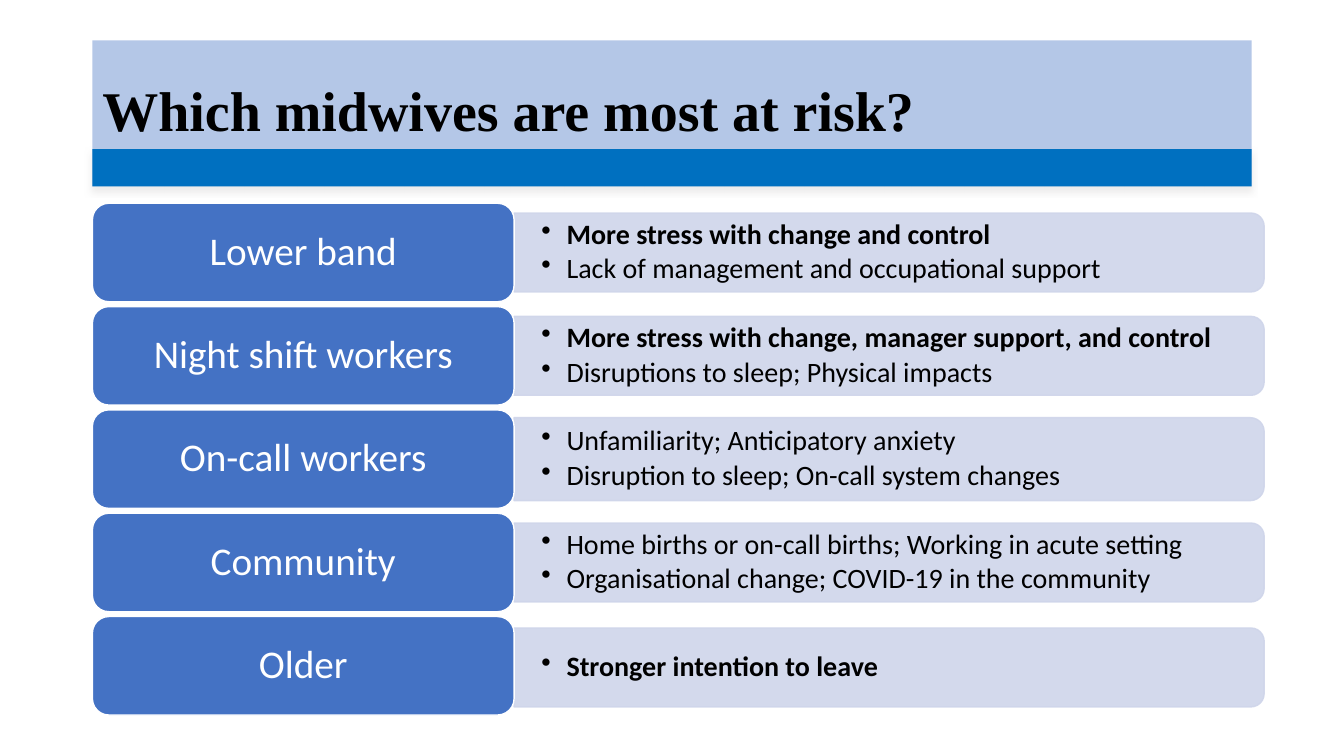
import dataclasses

import pptx
import pptx.dml.color
import pptx.enum.shapes
import pptx.enum.text
import pptx.oxml
import pptx.oxml.ns
import pptx.presentation
import pptx.shapes.autoshape
import pptx.slide
import pptx.text.text
import pptx.util

RGBColor = pptx.dml.color.RGBColor
Shape = pptx.shapes.autoshape.Shape
MSO_SHAPE = pptx.enum.shapes.MSO_SHAPE
PP_ALIGN = pptx.enum.text.PP_ALIGN

BLACK = RGBColor(0x00, 0x00, 0x00)
WHITE = RGBColor(0xFF, 0xFF, 0xFF)
TITLE_FILL = RGBColor(0xB4, 0xC7, 0xE7)
BAR_FILL = RGBColor(0x00, 0x70, 0xC0)
LABEL_FILL = RGBColor(0x44, 0x72, 0xC4)
PANEL_FILL = RGBColor(0xCF, 0xD5, 0xEA)

SLIDE_W = pptx.util.Inches(13.33)
SLIDE_H = pptx.util.Inches(7.5)
COL = SLIDE_W / 160
ROW = SLIDE_H / 90

LEFT = 11
LABEL_W = 50.2
PANEL_LEFT = LEFT + LABEL_W
PANEL_W = 89.28
FIRST_TOP = 24.2
LABEL_H = 11.72
PITCH = 12.3


@dataclasses.dataclass(frozen=True)
class Box:
    left: float
    top: float
    width: float
    height: float

    def emu(self) -> tuple[int, int, int, int]:
        return (round(self.left * COL), round(self.top * ROW),
                round(self.width * COL), round(self.height * ROW))


@dataclasses.dataclass(frozen=True)
class Bullet:
    text: str
    bold: bool = False


@dataclasses.dataclass(frozen=True)
class RiskGroup:
    label: str
    bullets: tuple[Bullet, ...]
    panel_height: float = 9.4
    panel_shift: float = 0


GROUPS = (
    RiskGroup("Lower band", (
        Bullet("More stress with change and control", True),
        Bullet("Lack of management and occupational support"))),
    RiskGroup("Night shift workers", (
        Bullet("More stress with change, manager support, and control", True),
        Bullet("Disruptions to sleep; Physical impacts"))),
    RiskGroup("On-call workers", (
        Bullet("Unfamiliarity; Anticipatory anxiety"),
        Bullet("Disruption to sleep; On-call system changes")),
        panel_height=9.88),
    RiskGroup("Community", (
        Bullet("Home births or on-call births; Working in acute setting"),
        Bullet("Organisational change; COVID-19 in the community"))),
    RiskGroup("Older", (Bullet("Stronger intention to leave", True),),
              panel_shift=0.2),
)


def add_block(slide: pptx.slide.Slide, kind: MSO_SHAPE, box: Box,
              fill: RGBColor, line: RGBColor | None = None) -> Shape:
    sp = slide.shapes.add_shape(kind, *box.emu())
    sp.fill.solid()
    sp.fill.fore_color.rgb = fill
    if line is None:
        sp.line.fill.background()
    else:
        sp.line.color.rgb = line
        sp.line.width = pptx.util.Pt(1)
    sp.shadow.inherit = False
    return sp


def set_frame(sp: Shape, inset_x: float, inset_y: float) -> pptx.text.text.TextFrame:
    tf = sp.text_frame
    tf.word_wrap = True
    tf.vertical_anchor = pptx.enum.text.MSO_ANCHOR.MIDDLE
    tf.margin_left = tf.margin_right = pptx.util.Inches(inset_x)
    tf.margin_top = tf.margin_bottom = pptx.util.Inches(inset_y)
    return tf


def style(p: pptx.text.text._Paragraph, text: str, font: str, size: int,
          color: RGBColor, bold: bool, align: PP_ALIGN) -> None:
    p.text = text
    p.alignment = align
    p.line_spacing = 0.9
    p.font.name = font
    p.font.size = pptx.util.Pt(size)
    p.font.color.rgb = color
    p.font.bold = bold


def add_bullet_mark(p: pptx.text.text._Paragraph) -> None:
    ppr = p._p.get_or_add_pPr()
    indent = pptx.util.Inches(0.25)
    ppr.set("marL", str(indent))
    ppr.set("indent", str(-indent))
    mark = pptx.oxml.parse_xml(
        f'<a:buChar {pptx.oxml.ns.nsdecls("a")} char="•"/>')
    ppr.find(pptx.oxml.ns.qn("a:defRPr")).addprevious(mark)


def add_bar_shadow(sp: Shape) -> None:
    effects = sp._element.spPr.find(pptx.oxml.ns.qn("a:effectLst"))
    effects.append(pptx.oxml.parse_xml(
        f'<a:outerShdw {pptx.oxml.ns.nsdecls("a")} blurRad="63500" dist="38100" '
        'dir="6360000" rotWithShape="0"><a:srgbClr val="E7E6E6">'
        '<a:alpha val="75000"/></a:srgbClr></a:outerShdw>'))


def add_header(slide: pptx.slide.Slide) -> None:
    sp = add_block(slide, MSO_SHAPE.RECTANGLE, Box(LEFT, 4.8, 138, 17.4), TITLE_FILL)
    tf = set_frame(sp, 0.1, 0.05)
    style(tf.paragraphs[0], "Which midwives are most at risk?",
          "Times New Roman", 40, BLACK, True, PP_ALIGN.LEFT)
    bar = add_block(slide, MSO_SHAPE.RECTANGLE, Box(LEFT, 17.76, 138, 4.44), BAR_FILL)
    add_bar_shadow(bar)


def add_panel(slide: pptx.slide.Slide, group: RiskGroup, middle: float) -> None:
    height = group.panel_height
    upright = Box(PANEL_LEFT + (PANEL_W - height) / 2, middle - PANEL_W / 2,
                  height, PANEL_W)
    sp = add_block(slide, MSO_SHAPE.ROUND_2_SAME_RECTANGLE, upright,
                   PANEL_FILL, PANEL_FILL)
    sp.rotation = 90
    for color in sp._element.spPr.iter(pptx.oxml.ns.qn("a:srgbClr")):
        color.append(pptx.oxml.parse_xml(
            f'<a:alpha {pptx.oxml.ns.nsdecls("a")} val="90000"/>'))

    text_height = height - 1
    box = Box(PANEL_LEFT, middle - text_height / 2, PANEL_W - 0.48, text_height)
    tf = set_frame(slide.shapes.add_textbox(*box.emu()), 0.27, 0.14)
    for i, bullet in enumerate(group.bullets):
        p = tf.add_paragraph() if i else tf.paragraphs[0]
        style(p, bullet.text, "Calibri", 20, BLACK, bullet.bold, PP_ALIGN.LEFT)
        p.space_after = pptx.util.Pt(3)
        add_bullet_mark(p)


def add_group(slide: pptx.slide.Slide, group: RiskGroup, index: int) -> None:
    top = FIRST_TOP + index * PITCH
    add_panel(slide, group, top + LABEL_H / 2 + group.panel_shift)
    sp = add_block(slide, MSO_SHAPE.ROUNDED_RECTANGLE,
                   Box(LEFT, top, LABEL_W, LABEL_H), LABEL_FILL, WHITE)
    tf = set_frame(sp, 0.12, 0.06)
    style(tf.paragraphs[0], group.label, "Calibri", 28, WHITE, False, PP_ALIGN.CENTER)


def main() -> None:
    prs = pptx.Presentation()
    prs.slide_width = SLIDE_W
    prs.slide_height = SLIDE_H
    slide = prs.slides.add_slide(prs.slide_layouts[6])
    add_header(slide)
    for index, group in enumerate(GROUPS):
        add_group(slide, group, index)
    prs.save("out.pptx")


if __name__ == "__main__":
    main()
